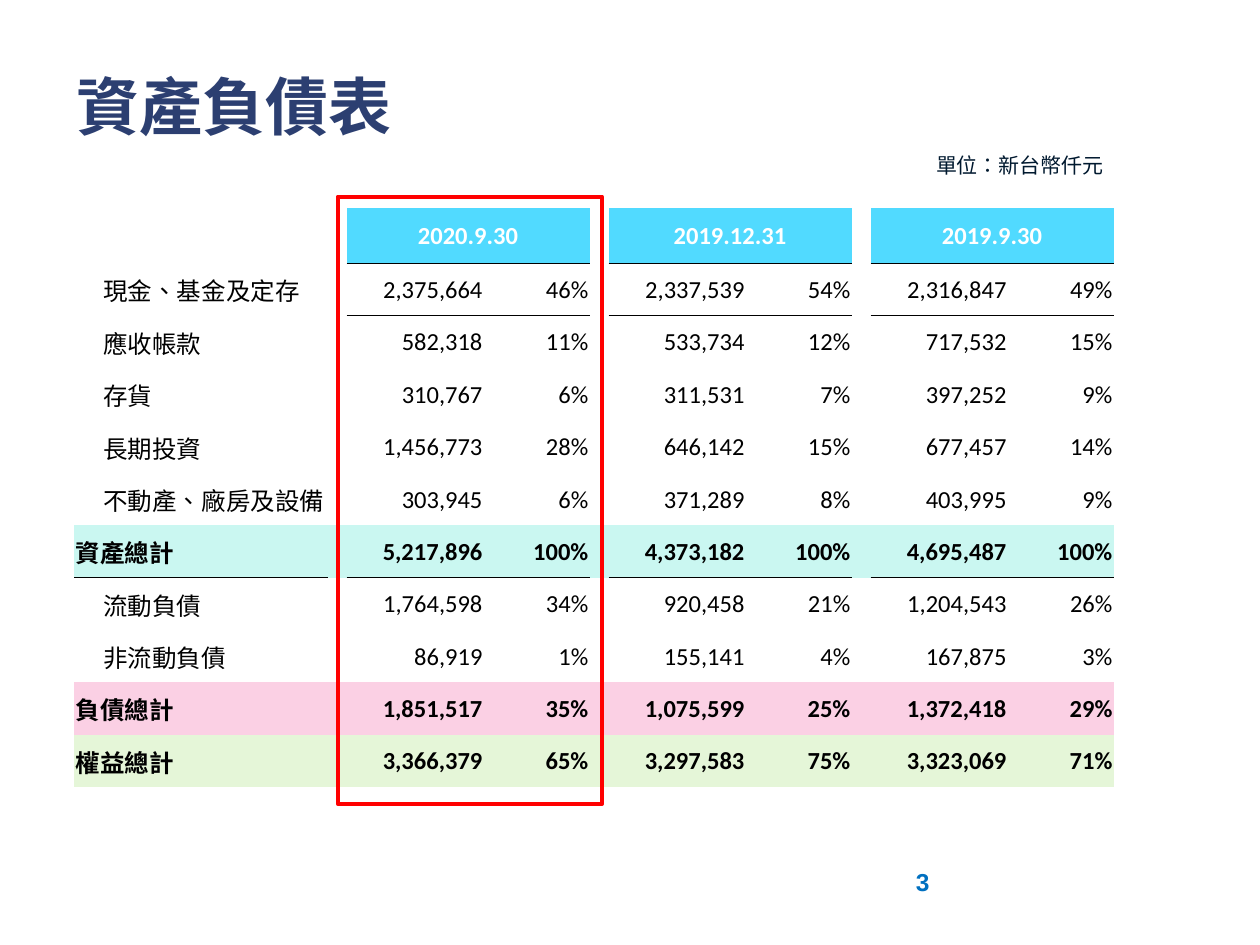
from lxml import etree
from pptx import Presentation
from pptx.dml.color import RGBColor
from pptx.enum.lang import MSO_LANGUAGE_ID
from pptx.enum.shapes import MSO_SHAPE
from pptx.enum.text import MSO_ANCHOR, PP_ALIGN
from pptx.oxml.ns import qn
from pptx.util import Inches, Pt

LEFT, CENTER, RIGHT = PP_ALIGN.LEFT, PP_ALIGN.CENTER, PP_ALIGN.RIGHT
TOP, MIDDLE = MSO_ANCHOR.TOP, MSO_ANCHOR.MIDDLE
RECTANGLE = MSO_SHAPE.RECTANGLE
LANGUAGE = MSO_LANGUAGE_ID.TRADITIONAL_CHINESE
PLAIN_STYLE = "{2D5ABB26-0587-4C30-8999-92F81FD0307C}"  # no style, no grid

THEME = {
    "font": "Arial", "table_font": "Calibri",
    "title_size": 36, "unit_size": 12, "body_size": 14,
    "title": "2C3F71", "unit": "00192F", "number": "0070C0",
    "header": "51DAFF", "header_text": "FFFFFF", "text": "000000",
    "assets": "CAF7F1", "liabilities": "FBD0E4", "equity": "E5F6D8",
    "highlight": "FF0000",
}

# Content: label, (amount, share) per date, fill of a total row
TITLE = "資產負債表"
UNIT = "單位：新台幣仟元"
PAGE_NUMBER = "3"
DATES = ["2020.9.30", "2019.12.31", "2019.9.30"]
ROWS = [
    ("現金、基金及定存", [("2,375,664", "46%"), ("2,337,539", "54%"), ("2,316,847", "49%")], None),
    ("應收帳款", [("582,318", "11%"), ("533,734", "12%"), ("717,532", "15%")], None),
    ("存貨", [("310,767", "6%"), ("311,531", "7%"), ("397,252", "9%")], None),
    ("長期投資", [("1,456,773", "28%"), ("646,142", "15%"), ("677,457", "14%")], None),
    ("不動產、廠房及設備", [("303,945", "6%"), ("371,289", "8%"), ("403,995", "9%")], None),
    ("資產總計", [("5,217,896", "100%"), ("4,373,182", "100%"), ("4,695,487", "100%")], "assets"),
    ("流動負債", [("1,764,598", "34%"), ("920,458", "21%"), ("1,204,543", "26%")], None),
    ("非流動負債", [("86,919", "1%"), ("155,141", "4%"), ("167,875", "3%")], None),
    ("負債總計", [("1,851,517", "35%"), ("1,075,599", "25%"), ("1,372,418", "29%")], "liabilities"),
    ("權益總計", [("3,366,379", "65%"), ("3,297,583", "75%"), ("3,323,069", "71%")], "equity"),
]

# Table grid, in inches
TABLE_LEFT, TABLE_TOP, TABLE_HEIGHT = 0.59, 1.65, 4.6
HEADER_HEIGHT = 0.44
ROW_HEIGHT = (TABLE_HEIGHT - HEADER_HEIGHT) / len(ROWS)
LABEL_WIDTH = 2.01
DATE_WIDTHS = [0.15, 1.14, 0.79]  # gap, amount, share
COLUMN_WIDTHS = [LABEL_WIDTH] + DATE_WIDTHS * len(DATES)
CELL_MARGIN, LABEL_INDENT, AMOUNT_INDENT = 0.01, 0.22, 0.05


def color(name):
    return RGBColor.from_string(THEME[name])


def write(frame, text, size, ink, align=LEFT, bold=False, font="font", anchor=TOP):
    frame.word_wrap = True
    frame.vertical_anchor = anchor
    paragraph = frame.paragraphs[0]
    paragraph.text = text
    paragraph.alignment = align
    paragraph.font.name = THEME[font]
    paragraph.font.size = Pt(THEME[size])
    paragraph.font.bold = bold
    paragraph.font.color.rgb = color(ink)
    paragraph.runs[0].font.language_id = LANGUAGE


def add_text(slide, box, *args, **options):
    shape = slide.shapes.add_textbox(*map(Inches, box))
    write(shape.text_frame, *args, **options)


def add_border(cell, side, points):
    """Draw one border; borders come before the fill in the cell XML."""
    line = etree.Element(qn("a:ln" + side), w=str(Pt(points)))
    fill = etree.SubElement(line, qn("a:solidFill"))
    etree.SubElement(fill, qn("a:srgbClr"), val=THEME["text"])
    cell._tc.get_or_add_tcPr().insert(0, line)


def write_cell(cell, text, align, ink="text", bold=False, left=0, right=0):
    cell.margin_left = Inches(CELL_MARGIN + left)
    cell.margin_right = Inches(CELL_MARGIN + right)
    cell.vertical_anchor = MIDDLE
    write(cell.text_frame, text, "body_size", ink, align, bold, "table_font", MIDDLE)


def prepare(cell, fill):
    cell.margin_left = cell.margin_right = cell.margin_top = Inches(CELL_MARGIN)
    cell.margin_bottom = 0
    if fill:
        cell.fill.solid()
        cell.fill.fore_color.rgb = color(fill)
    else:
        cell.fill.background()


def add_balance_sheet(slide):
    table = slide.shapes.add_table(
        len(ROWS) + 1, len(COLUMN_WIDTHS), Inches(TABLE_LEFT), Inches(TABLE_TOP),
        Inches(sum(COLUMN_WIDTHS)), Inches(TABLE_HEIGHT)).table
    table._tbl.tblPr.find(qn("a:tableStyleId")).text = PLAIN_STYLE
    table.first_row = table.horz_banding = False
    for column, width in zip(table.columns, COLUMN_WIDTHS):
        column.width = Inches(width)
    for index, row in enumerate(table.rows):
        row.height = Inches(ROW_HEIGHT if index else HEADER_HEIGHT)
    amount_columns = [2 + len(DATE_WIDTHS) * i for i in range(len(DATES))]

    # Date headers, each over an amount and a share
    for cell in table.rows[0].cells:
        prepare(cell, None)
    for column, date in zip(amount_columns, DATES):
        header = table.cell(0, column)
        header.merge(table.cell(0, column + 1))
        write_cell(header, date, CENTER, "header_text", bold=True)
        for cell in (header, table.cell(0, column + 1)):
            prepare(cell, "header")
            add_border(cell, "B", 1)

    # Items and totals
    for row, (label, figures, fill) in enumerate(ROWS, start=1):
        total = fill is not None
        for cell in table.rows[row].cells:
            prepare(cell, fill)
        label_cell, figure_cells = table.cell(row, 0), []
        write_cell(label_cell, label, LEFT, bold=total, left=0 if total else LABEL_INDENT)
        for column, (amount, share) in zip(amount_columns, figures):
            pair = [table.cell(row, column), table.cell(row, column + 1)]
            write_cell(pair[0], amount, RIGHT, bold=total, right=AMOUNT_INDENT)
            write_cell(pair[1], share, RIGHT, bold=total)
            figure_cells += pair
        if row == 1:
            for cell in figure_cells:
                add_border(cell, "T", 1)
        if fill == "assets":
            for cell in [label_cell] + figure_cells:
                add_border(cell, "B", 0.5)


def main():
    presentation = Presentation()
    presentation.slide_width, presentation.slide_height = Inches(10), Inches(7.5)
    slide = presentation.slides.add_slide(presentation.slide_layouts[5])

    # Title, unit and page number
    title = slide.shapes.title
    title.left, title.top, title.width, title.height = map(Inches, (0.51, 0.21, 8.58, 1.25))
    write(title.text_frame, TITLE, "title_size", "title", bold=True, anchor=MIDDLE)
    add_text(slide, (7.17, 6.83, 2.33, 0.52), PAGE_NUMBER, "body_size", "number", bold=True)
    add_text(slide, (6.57, 1.16, 2.29, 0.3), UNIT, "unit_size", "unit", RIGHT)

    add_balance_sheet(slide)

    # Frame around the latest date
    frame = slide.shapes.add_shape(RECTANGLE, *map(Inches, (2.68, 1.56, 2.1, 4.82)))
    frame.shadow.inherit = False
    frame.fill.background()
    frame.line.color.rgb = color("highlight")
    frame.line.width = Pt(2.25)

    presentation.save("out.pptx")


if __name__ == "__main__":
    main()
